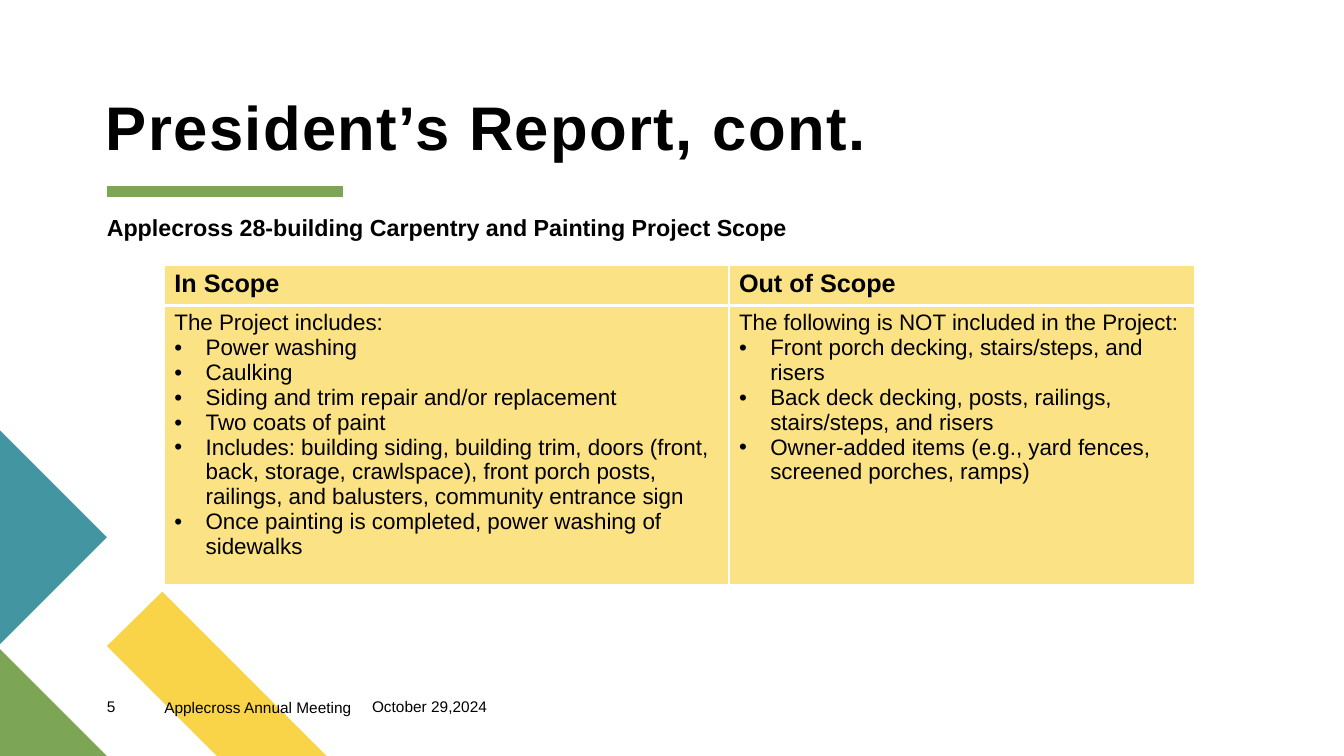
from dataclasses import dataclass

from lxml import etree
from pptx import Presentation
from pptx.dml.color import RGBColor
from pptx.enum.shapes import MSO_CONNECTOR
from pptx.enum.text import MSO_ANCHOR
from pptx.oxml.ns import qn
from pptx.util import Inches, Pt

STRAIGHT = MSO_CONNECTOR.STRAIGHT
TOP, BOTTOM = MSO_ANCHOR.TOP, MSO_ANCHOR.BOTTOM


@dataclass(frozen=True)
class Theme:
    font: str = "Arial"
    ink: str = "000000"
    edge: str = "FFFFFF"
    cell: str = "FBE284"
    gold: str = "F9D448"
    green: str = "7CA655"
    teal: str = "4495A2"
    title: float = 44
    lead: float = 16.6
    head: float = 18
    body: float = 16
    foot: float = 11


@dataclass(frozen=True)
class Facet:
    points: tuple[tuple[float, float], ...]
    color: str


@dataclass(frozen=True)
class Label:
    text: str
    box: tuple[float, float, float, float]
    size: float
    bold: bool = False
    pitch: float = 1.0
    track: int = 0
    anchor: MSO_ANCHOR = TOP


@dataclass(frozen=True)
class Column:
    width: float
    head: str
    intro: str
    items: tuple[str, ...]


THEME = Theme()

FACETS = (
    Facet(((3.24, 7.5), (2.15, 7.5), (1.06, 6.41), (1.61, 5.87)), THEME.gold),
    Facet(((1.06, 7.5), (0, 7.5), (0, 6.44)), THEME.green),
    Facet(((0, 4.27), (1.06, 5.33), (0, 6.39)), THEME.teal),
)

LABELS = (
    Label("President’s Report, cont.", (1.05, 0.96, 8.02, 0.67), THEME.title,
          True, 0.9, 100, BOTTOM),
    Label("Applecross 28-building Carpentry and Painting Project Scope",
          (1.06, 2.15, 7.03, 0.44), THEME.lead, True, 0.9),
    Label("5", (1.06, 6.92, 0.57, 0.27), THEME.foot),
    Label("Applecross Annual Meeting", (1.63, 6.93, 2.06, 0.27), THEME.foot),
    Label("October 29,2024", (3.69, 6.92, 1.44, 0.27), THEME.foot),
)

SCOPE = (
    Column(5.6, "In Scope", "The Project includes:", (
        "Power washing",
        "Caulking",
        "Siding and trim repair and/or replacement",
        "Two coats of paint",
        "Includes: building siding, building trim, doors (front, back, storage, "
        "crawlspace), front porch posts, railings, and balusters, community "
        "entrance sign",
        "Once painting is completed, power washing of sidewalks",
    )),
    Column(4.62, "Out of Scope", "The following is NOT included in the Project:", (
        "Front porch decking, stairs/steps, and risers",
        "Back deck decking, posts, railings, stairs/steps, and risers",
        "Owner-added items (e.g., yard fences, screened porches, ramps)",
    )),
)


def style(para, size: float, bold: bool = False) -> None:
    for run in para.runs:
        font = run.font
        font.name, font.size, font.bold = THEME.font, Pt(size), bold
        font.color.rgb = RGBColor.from_string(THEME.ink)


def add_facet(slide, facet: Facet) -> None:
    first, *rest = [(Inches(x), Inches(y)) for x, y in facet.points]
    pen = slide.shapes.build_freeform(*first)
    pen.add_line_segments(rest, close=True)
    shape = pen.convert_to_shape()
    shape.shadow.inherit = False
    shape.fill.solid()
    shape.fill.fore_color.rgb = RGBColor.from_string(facet.color)
    shape.line.fill.background()


def add_rule(slide) -> None:
    y = Inches(1.9)
    rule = slide.shapes.add_connector(STRAIGHT, Inches(1.06), y, Inches(3.4), y)
    rule.line.color.rgb = RGBColor.from_string(THEME.green)
    rule.line.width = Pt(8)
    etree.SubElement(rule._element.spPr, qn("a:effectLst"))


def add_label(slide, label: Label) -> None:
    frame = slide.shapes.add_textbox(*map(Inches, label.box)).text_frame
    frame.word_wrap = True
    frame.vertical_anchor = label.anchor
    frame.margin_left = frame.margin_right = 0
    frame.margin_top = frame.margin_bottom = 0
    frame.text = label.text
    para = frame.paragraphs[0]
    para.line_spacing = label.pitch
    style(para, label.size, label.bold)
    if label.track:
        para.runs[0].font._element.set("spc", str(label.track))


def add_bullet(para) -> None:
    props = para._p.get_or_add_pPr()
    indent = Inches(0.31)
    props.set("marL", str(indent))
    props.set("indent", str(-indent))
    etree.SubElement(props, qn("a:buFont"), typeface=THEME.font)
    etree.SubElement(props, qn("a:buChar"), char="•")


def paint_cell(cell, sides: dict[str, float]) -> None:
    """Fill the cell and edge it; sides maps L, R, T, B to widths in points."""
    cell.fill.solid()
    cell.fill.fore_color.rgb = RGBColor.from_string(THEME.cell)
    props = cell._tc.get_or_add_tcPr()
    for spot, (side, width) in enumerate(sides.items()):
        line = etree.Element(qn(f"a:ln{side}"), w=str(Pt(width)))
        fill = etree.SubElement(line, qn("a:solidFill"))
        etree.SubElement(fill, qn("a:srgbClr"), val=THEME.edge)
        props.insert(spot, line)


def add_scope(slide) -> None:
    rows = (0.37, 2.57)
    width = sum(col.width for col in SCOPE)
    table = slide.shapes.add_table(
        len(rows), len(SCOPE), Inches(1.63), Inches(2.63),
        Inches(width), Inches(sum(rows))).table
    table.horz_banding = False
    for row, height in zip(table.rows, rows):
        row.height = Inches(height)
    for spot, col in enumerate(SCOPE):
        table.columns[spot].width = Inches(col.width)
        head, body = table.cell(0, spot), table.cell(1, spot)
        head.text_frame.text = col.head
        style(head.text_frame.paragraphs[0], THEME.head, True)
        paint_cell(head, {"L": 1, "R": 1, "T": 1, "B": 3})
        body.text_frame.text = "\n".join((col.intro, *col.items))
        paras = body.text_frame.paragraphs
        for para in paras:
            style(para, THEME.body)
        for para in paras[1:]:
            add_bullet(para)
        paint_cell(body, {"L": 1, "R": 1, "T": 3, "B": 1})


def main() -> None:
    deck = Presentation()
    deck.slide_width, deck.slide_height = Inches(13.33), Inches(7.5)
    slide = deck.slides.add_slide(deck.slide_layouts[6])
    for facet in FACETS:
        add_facet(slide, facet)
    add_rule(slide)
    for label in LABELS:
        add_label(slide, label)
    add_scope(slide)
    deck.save("out.pptx")


if __name__ == "__main__":
    main()
